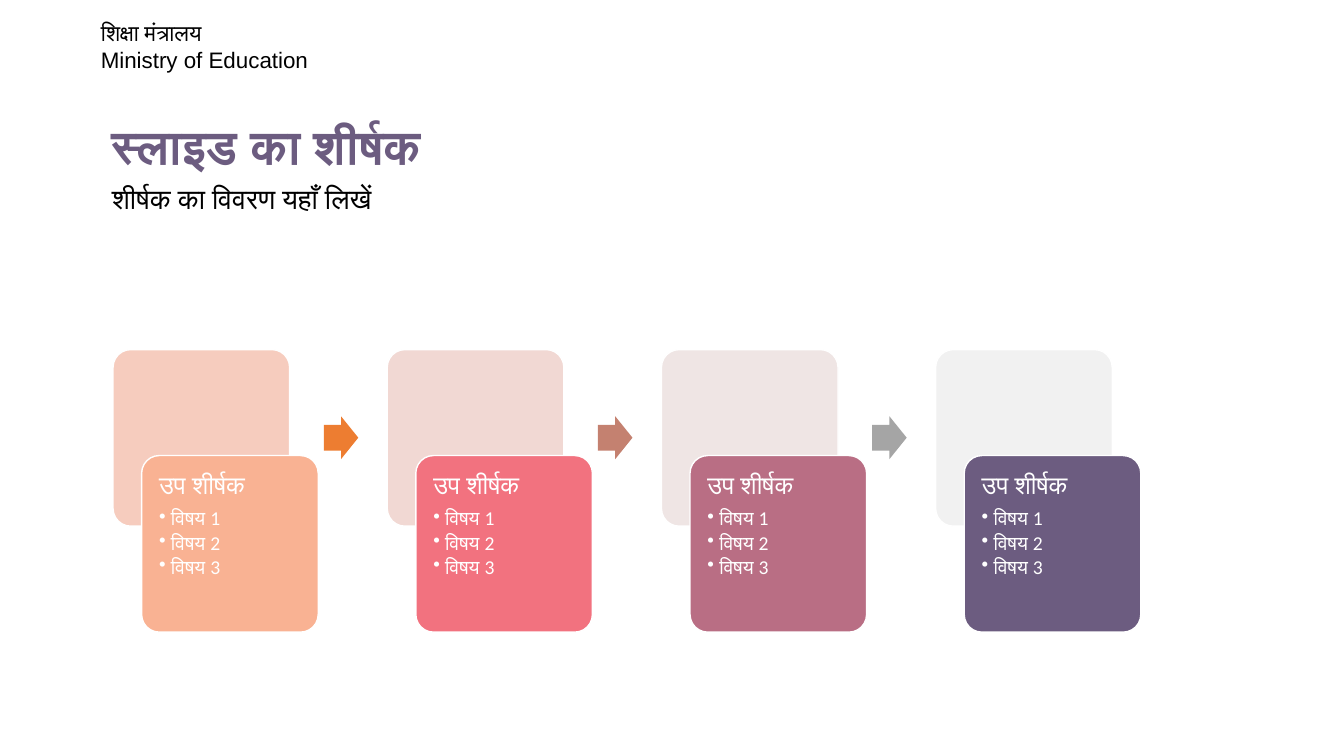
from lxml import etree
from pptx import Presentation
from pptx.dml.color import RGBColor
from pptx.enum.shapes import MSO_SHAPE
from pptx.enum.text import MSO_ANCHOR, PP_ALIGN
from pptx.oxml.ns import qn
from pptx.util import Cm, Pt

ROUNDED = MSO_SHAPE.ROUNDED_RECTANGLE
ARROW = MSO_SHAPE.RIGHT_ARROW
TOP = MSO_ANCHOR.TOP
MIDDLE = MSO_ANCHOR.MIDDLE
LEFT = PP_ALIGN.LEFT

THEME = {
    "black": "000000",
    "white": "FFFFFF",
    "purple": "6C5C80",
    "panels": ["F6CCBE", "F1D8D3", "EFE5E4", "F1F1F1"],
    "cards": ["F9B293", "F2727F", "B96E84", "6C5C80"],
    "arrows": ["ED7D31", "C48170", "A5A5A5"],
    "ministry_size": 16,
    "title_size": 34,
    "description_size": 20,
    "heading_size": 18,
    "topic_size": 14,
}


def add_block(kind, position, color, adjustments, outlined=True):
    shape = slide.shapes.add_shape(kind, *map(Cm, position))
    shape.shadow.inherit = False
    shape.fill.solid()
    shape.fill.fore_color.rgb = RGBColor.from_string(color)
    for index, value in enumerate(adjustments):
        shape.adjustments[index] = value
    if outlined:
        shape.line.color.rgb = RGBColor.from_string(THEME["white"])
        shape.line.width = Pt(1)
    else:
        shape.line.fill.background()
    return shape


def write_lines(shape, lines, frame_format):
    frame = shape.text_frame
    for name, value in frame_format.items():
        setattr(frame, name, value)
    for index, (text, font, size, color, bold, spacing, after, bullet) in enumerate(lines):
        paragraph = frame.paragraphs[0] if index == 0 else frame.add_paragraph()
        if bullet:
            paragraph.level = 1
            properties = paragraph._p.get_or_add_pPr()
            properties.set("marL", str(Cm(0.3)))
            properties.set("indent", str(-Cm(0.3)))
            etree.SubElement(properties, qn("a:buChar")).set("char", "•")
        paragraph_format = {
            "alignment": LEFT,
            "line_spacing": spacing,
            "space_before": Pt(0),
            "space_after": Pt(after),
        }
        for name, value in paragraph_format.items():
            setattr(paragraph, name, value)
        run = paragraph.add_run()
        run.text = text
        for name, value in {"name": font, "size": Pt(size), "bold": bold}.items():
            setattr(run.font, name, value)
        run.font.color.rgb = RGBColor.from_string(color)


presentation = Presentation()
presentation.slide_width = Cm(33.87)
presentation.slide_height = Cm(19.05)
slide = presentation.slides.add_slide(presentation.slide_layouts[6])

black, white = THEME["black"], THEME["white"]
ministry = [
    (text, "Arial", THEME["ministry_size"], black, False, 1.0, 0, False)
    for text in ("शिक्षा मंत्रालय", "Ministry of Education")
]
title = [("स्लाइड का शीर्षक", "Arial", THEME["title_size"], THEME["purple"], True, 0.9, 0, False)]
description = [
    ("शीर्षक का विवरण यहाँ लिखें", "Calibri", THEME["description_size"], black, False, 0.9, 0, False)
]
text_boxes = [
    ((2.29, 0.36, 13.18, 1.63), ministry, TOP),
    ((2.57, 2.95, 15.57, 1.6), title, MIDDLE),
    ((2.57, 4.57, 18.26, 0.94), description, MIDDLE),
]
for position, lines, anchor in text_boxes:
    box = slide.shapes.add_textbox(*map(Cm, position))
    write_lines(box, lines, {"word_wrap": True, "vertical_anchor": anchor})

card_lines = [("उप शीर्षक", "Calibri", THEME["heading_size"], white, False, 0.9, 6.3, False)]
card_lines += [
    (f"विषय {number}", "Calibri", THEME["topic_size"], white, False, 0.9, 2.1, True)
    for number in range(1, 4)
]
card_frame = {
    "word_wrap": True,
    "vertical_anchor": TOP,
    "margin_left": Cm(0.31),
    "margin_right": Cm(0.31),
    "margin_top": Cm(0.31),
    "margin_bottom": Cm(0.31),
}

first_left, panel_top, side, pitch = 2.85, 8.81, 4.45, 6.91
for index, (panel_color, card_color) in enumerate(zip(THEME["panels"], THEME["cards"])):
    left = first_left + index * pitch
    add_block(ROUNDED, (left, panel_top, side, side), panel_color, [0.1])
    card = add_block(ROUNDED, (left + 0.72, panel_top + 2.67, side, side), card_color, [0.1])
    write_lines(card, card_lines, card_frame)
    if index < len(THEME["arrows"]):
        arrow_position = (left + 5.31, panel_top + 1.68, 0.87, 1.08)
        add_block(ARROW, arrow_position, THEME["arrows"][index], [0.6, 0.5], outlined=False)

presentation.save("out.pptx")
